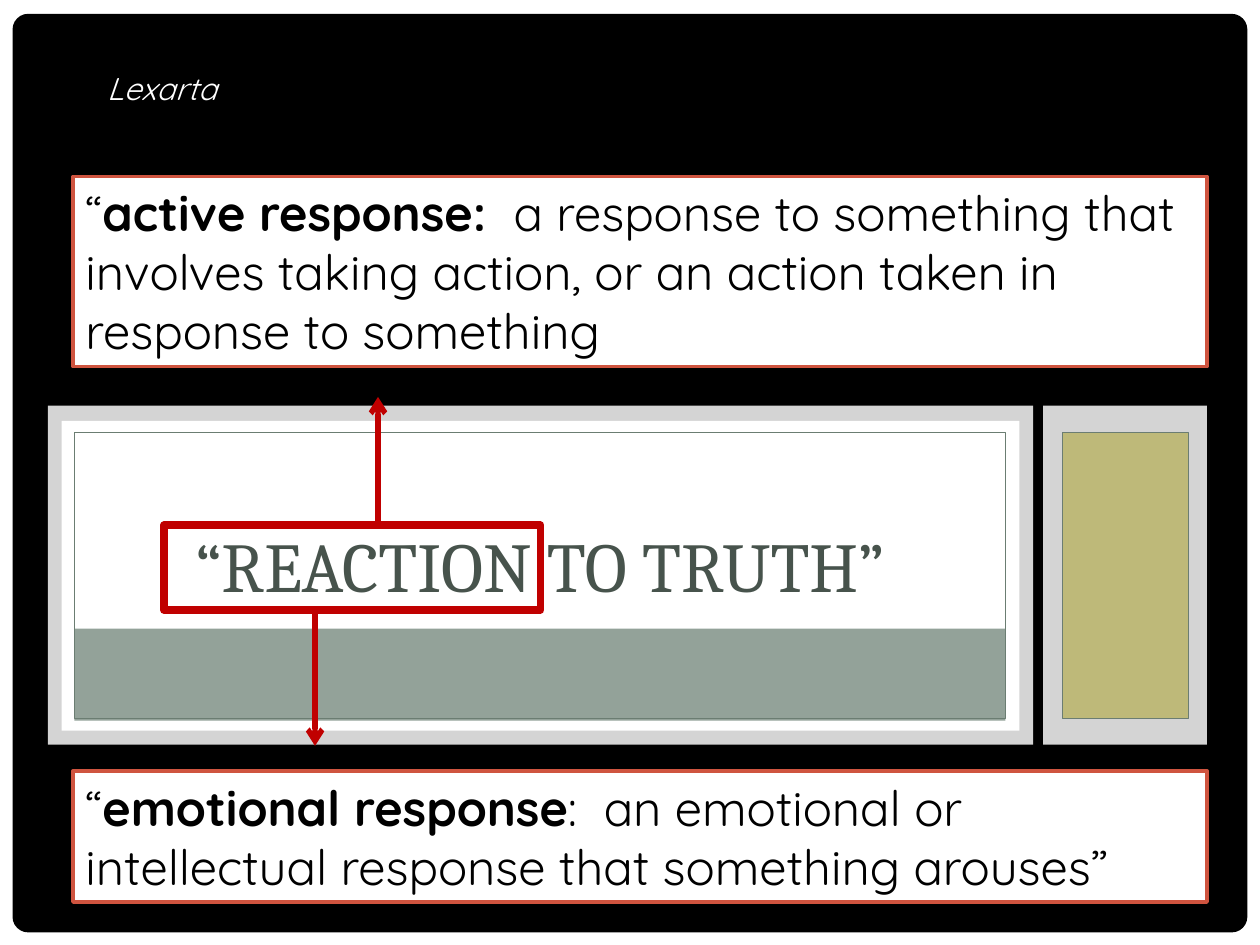
"""Build the “Reaction to truth” title slide with its two definitions."""
from dataclasses import dataclass
from typing import Optional

from lxml.etree import SubElement
from pptx import Presentation
from pptx.dml.color import RGBColor
from pptx.enum.shapes import MSO_CONNECTOR as Connector, MSO_SHAPE as Shape
from pptx.enum.text import MSO_ANCHOR as Anchor, MSO_AUTO_SIZE as AutoSize, PP_ALIGN as Align
from pptx.oxml.ns import qn
from pptx.util import Pt


@dataclass(frozen=True)
class Theme:
    white: str = "FFFFFF"
    black: str = "000000"
    olive: str = "B5AE53"
    sage: str = "93A299"
    sage_edge: str = "6B7D72"
    title_ink: str = "47534C"
    definition_edge: str = "CF543F"
    accent: str = "C00000"
    title_font: str = "Cambria"
    body_font: str = "Quicksand"
    title_size: float = 40
    definition_size: float = 28
    source_size: float = 18


@dataclass(frozen=True)
class Box:
    left: float
    top: float
    width: float
    height: float

    def lengths(self) -> tuple:
        return Pt(self.left), Pt(self.top), Pt(self.width), Pt(self.height)


@dataclass(frozen=True)
class Panel:
    box: Box
    fill: Optional[str] = None
    edge: Optional[str] = None
    edge_width: float = 0.5
    opacity: int = 100
    corner: Optional[float] = None


@dataclass(frozen=True)
class Definition:
    top: float
    height: float
    term: str
    meaning: str


@dataclass(frozen=True)
class Arrow:
    x: float
    start: float
    end: float


THEME = Theme()
PANEL_TOP, PANEL_HEIGHT = 231.84, 193.68
INNER_TOP, INNER_HEIGHT = 246.96, 163.44
TITLE_LEFT, TITLE_WIDTH = 42.48, 532.08

PANELS = (
    Panel(Box(7.2, 7.92, 705.6, 524.88), THEME.black, corner=0.017),
    Panel(Box(27.36, PANEL_TOP, 563.04, PANEL_HEIGHT), THEME.white, opacity=83),
    Panel(Box(596.16, PANEL_TOP, 93.6, PANEL_HEIGHT), THEME.white, opacity=83),
    Panel(Box(606.96, INNER_TOP, 72, INNER_HEIGHT), THEME.olive, THEME.sage_edge, opacity=70),
    Panel(Box(35.28, 240.48, 547.2, 177.12), THEME.white),
    Panel(Box(TITLE_LEFT, 359.28, TITLE_WIDTH, 52.56), THEME.sage),
    Panel(Box(TITLE_LEFT, INNER_TOP, TITLE_WIDTH, INNER_HEIGHT), edge=THEME.sage_edge),
)
DEFINITIONS = (
    Definition(440.64, 74.88, "emotional response",
               ":  an emotional or intellectual response that something arouses”"),
    Definition(100.8, 108.72, "active response:  ",
               "a response to something that involves taking action, "
               "or an action taken in response to something"),
)
HIGHLIGHT = Panel(Box(93.6, 300.24, 215.28, 48.24), edge=THEME.accent, edge_width=4.5)
ARROWS = (Arrow(216, 300.24, 226.8), Arrow(180, 347.76, 426.24))


def color(value: str) -> RGBColor:
    """Turn a hex value into a colour."""
    return RGBColor.from_string(value)


def add_run(paragraph, text: str, font: str, size: float, ink: str,
            bold: bool = False, italic: bool = False) -> None:
    """Add one formatted run."""
    run = paragraph.add_run()
    run.text = text
    run.font.name, run.font.size = font, Pt(size)
    run.font.bold, run.font.italic = bold, italic
    run.font.color.rgb = color(ink)


def add_panel(shapes, panel: Panel):
    """Draw a rectangle, rounded if it has a corner value."""
    rounded = panel.corner is not None
    shape = shapes.add_shape(Shape.ROUNDED_RECTANGLE if rounded else Shape.RECTANGLE,
                             *panel.box.lengths())
    shape.shadow.inherit = False
    if rounded:
        shape.adjustments[0] = panel.corner
    if panel.fill:
        shape.fill.solid()
        shape.fill.fore_color.rgb = color(panel.fill)
        if panel.opacity < 100:
            tint = shape.element.spPr.find(qn("a:solidFill"))[0]
            SubElement(tint, qn("a:alpha")).set("val", str(panel.opacity * 1000))
    else:
        shape.fill.background()
    if panel.edge:
        shape.line.color.rgb = color(panel.edge)
        shape.line.width = Pt(panel.edge_width)
    else:
        shape.line.fill.background()
    return shape


def add_definition(shapes, definition: Definition) -> None:
    """Draw a framed definition with its term in bold."""
    box = Box(41.76, definition.top, 648, definition.height)
    frame = add_panel(shapes, Panel(box, THEME.white, THEME.definition_edge, 2)).text_frame
    frame.word_wrap, frame.auto_size = True, AutoSize.SHAPE_TO_FIT_TEXT
    frame.vertical_anchor = Anchor.TOP
    paragraph = frame.paragraphs[0]
    paragraph.alignment = Align.LEFT
    for text, bold in (("“", False), (definition.term, True), (definition.meaning, False)):
        add_run(paragraph, text, THEME.body_font, THEME.definition_size, THEME.black, bold)


def add_arrow(shapes, arrow: Arrow) -> None:
    """Draw a vertical arrow."""
    line = shapes.add_connector(Connector.STRAIGHT, Pt(arrow.x), Pt(arrow.start),
                                Pt(arrow.x), Pt(arrow.end))
    line.line.color.rgb = color(THEME.accent)
    line.line.width = Pt(3)
    properties = line.element.spPr
    SubElement(properties.find(qn("a:ln")), qn("a:tailEnd")).set("type", "arrow")
    SubElement(properties, qn("a:effectLst"))


def place_title(title) -> None:
    """Format the title and bring it in front of the panels."""
    title.left, title.top, title.width, title.height = Box(47.52, 254.16, 522, 95.76).lengths()
    frame = title.text_frame
    frame.word_wrap, frame.auto_size = True, AutoSize.NONE
    frame.vertical_anchor = Anchor.BOTTOM
    frame.paragraphs[0].alignment = Align.CENTER
    add_run(frame.paragraphs[0], "“REACTION TO TRUTH”", THEME.title_font,
            THEME.title_size, THEME.title_ink)
    title.element.getparent().append(title.element)


def add_source(shapes) -> None:
    """Add the name of the reference work."""
    frame = shapes.add_textbox(*Box(54, 36, 83.52, 28.8).lengths()).text_frame
    frame.word_wrap, frame.auto_size = False, AutoSize.SHAPE_TO_FIT_TEXT
    add_run(frame.paragraphs[0], "Lexarta", THEME.body_font, THEME.source_size,
            THEME.white, italic=True)


def main() -> None:
    """Build and save the slide."""
    presentation = Presentation()
    presentation.slide_width, presentation.slide_height = Pt(720), Pt(540)
    slide = presentation.slides.add_slide(presentation.slide_layouts[5])
    slide.background.fill.solid()
    slide.background.fill.fore_color.rgb = color(THEME.white)
    shapes = slide.shapes
    for panel in PANELS:
        add_panel(shapes, panel)
    place_title(shapes.title)
    for definition in DEFINITIONS:
        add_definition(shapes, definition)
    callout = shapes.add_group_shape().shapes
    for arrow in ARROWS:
        add_arrow(callout, arrow)
    add_panel(callout, HIGHLIGHT)
    add_source(shapes)
    presentation.save("out.pptx")


if __name__ == "__main__":
    main()
